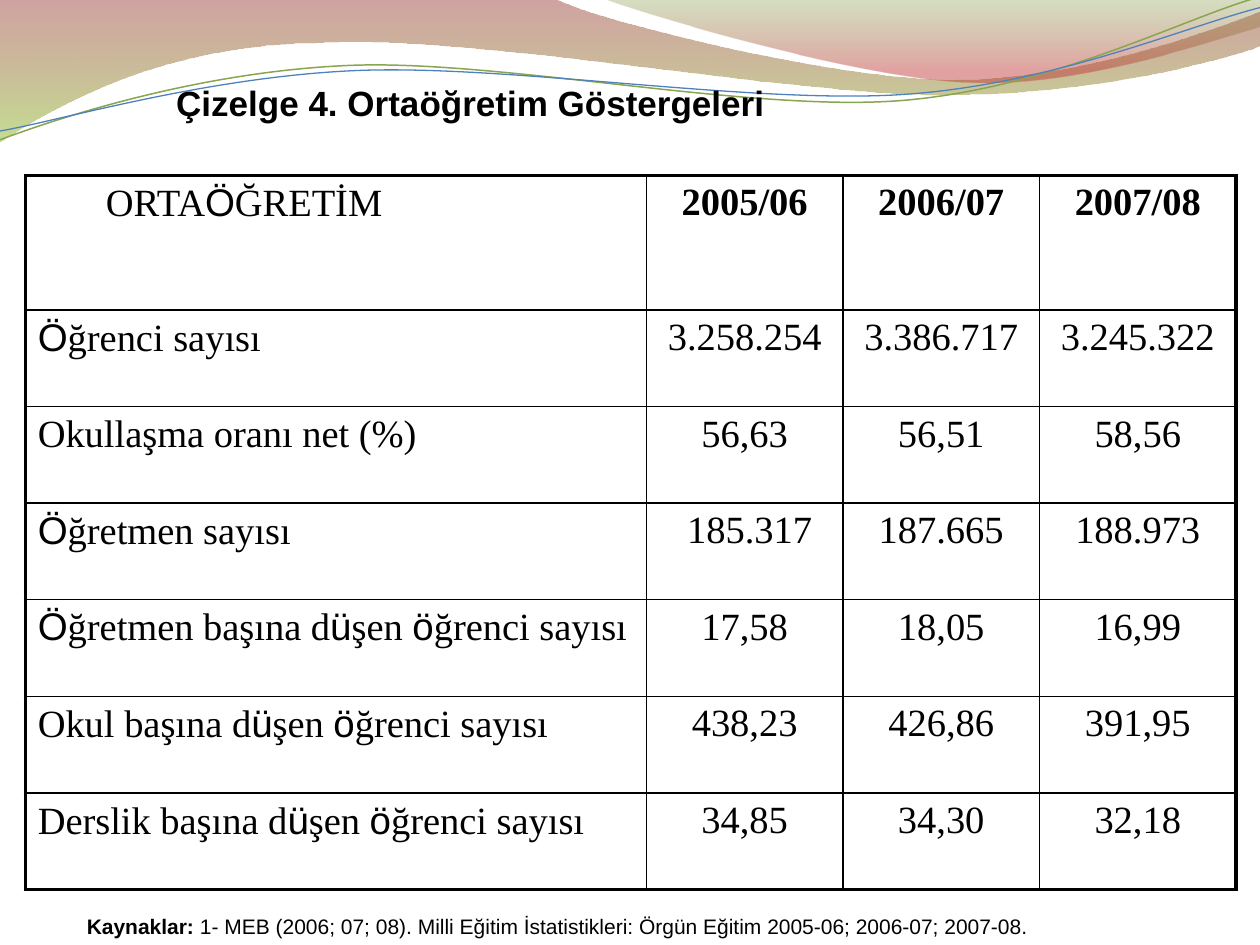
from itertools import groupby
from math import cos, radians, sin
from lxml import etree
from pptx import Presentation
from pptx import util as u
from pptx.dml.color import RGBColor
from pptx.enum import text
from pptx.oxml.ns import qn

Inches = u.Inches
THEME = {
    "ink": "000000", "green": "89A54F", "blue": "4F81BD",
    "title": 20, "cell": 22, "note": 12,
    "sans": "Arial", "serif": "Times New Roman",
}
LEFT, MID, JUST = text.PP_ALIGN.LEFT, text.PP_ALIGN.CENTER, text.PP_ALIGN.JUSTIFY


def write(par, runs, align):
    """Fill a paragraph with (words, font values) runs."""
    par.alignment = align
    for words, form in runs:
        run = par.add_run()
        run.text = words
        for key, val in form.items():
            setattr(run.font, key, val)
        run.font.color.rgb = RGBColor.from_string(THEME["ink"])


def trace(area, start, parts, tilt=0):
    """Outline of lines (2 numbers) and cubic curves (6); an open one is tilted."""
    left, top, wide, high = area
    pen = slide.shapes.build_freeform(Inches(left), Inches(top))
    pen.add_line_segments([(Inches(left + wide), Inches(top)),
                           (Inches(left + wide), Inches(top + high)),
                           (Inches(left), Inches(top + high))])
    shape = pen.convert_to_shape()
    shape.shadow.inherit = False
    shape.rotation = -tilt
    # Swap the plain frame for the curved outline
    route = next(shape._element.iter(qn("a:pathLst")))[0]
    for step in list(route):
        route.remove(step)
    c, s = cos(radians(tilt)), sin(radians(tilt))
    for n, part in enumerate([start] + parts):
        kind = "moveTo" if n == 0 else "lnTo" if len(part) == 2 else "cubicBezTo"
        step = etree.SubElement(route, qn("a:" + kind))
        for x, y in zip(part[::2], part[1::2]):
            x, y = x - left - wide / 2, y - top - high / 2
            etree.SubElement(step, qn("a:pt"),
                             x=str(Inches(x * c - y * s + wide / 2)),
                             y=str(Inches(x * s + y * c + high / 2)))
    if not tilt:
        etree.SubElement(route, qn("a:close"))
    return shape


deck = Presentation()
deck.slide_width, deck.slide_height = Inches(10), Inches(7.5)
slide = deck.slides.add_slide(deck.slide_layouts[6])

# Shaded bands across the top: area, start, outline, (place, colour, opacity) stops
bands = [
    ((-0.01, -0.01, 10.02, 1.14), (0, -0.01),
     [(4.4, -0.01), (4.76, 0.17, 6.64, 0.63, 7.58, 0.63),
      (8.53, 0.63, 9.58, 0.26, 10, 0.09), (10.01, 0.36),
      (9.83, 0.44, 8.7, 0.76, 7.46, 0.75), (6.22, 0.75, 3.82, 0.28, 2.57, 0.34),
      (1.29, 0.35, 0.46, 0.83, -0.01, 1.13), (0, -0.01)],
     [(0, "973330", 45), (1, "95C238", 55)]),
    ((4.79, -0.01, 5.21, 0.7), (4.79, -0.01),
     [(5.09, 0.11, 6.82, 0.62, 7.69, 0.65), (8.56, 0.69, 9.61, 0.32, 10, 0.21),
      (10, 0), (4.79, -0.01)],
     [(0, "769537", 30), (0.8, "BE3330", 45)]),
]
for area, start, parts, stops in bands:
    band = trace(area, start, parts)
    band.line.fill.background()
    band.fill.gradient()
    band.fill.gradient_angle = 270
    for stop, (place, hue, clear) in zip(band.fill.gradient_stops, stops):
        stop.position = place
        stop.color.rgb = RGBColor.from_string(hue)
        tint = stop._gs.find(qn("a:srgbClr"))
        etree.SubElement(tint, qn("a:alpha"), val=str(clear * 1000))

# Thin waves over the bands
waves = [
    ((-0.02, 0.22, 10.02, 0.71), (0, 1.11),
     [(0.48, 0.93, 1.58, 0.57, 2.77, 0.52), (3.95, 0.47, 5.93, 0.89, 7.13, 0.8),
      (8.33, 0.71, 9.38, 0.15, 9.98, -0.02)], "green", 0.85),
    ((-0.02, 0.3, 10.03, 0.58), (0, 1.04),
     [(0.47, 0.96, 1.64, 0.61, 2.83, 0.56), (4.03, 0.51, 5.97, 0.83, 7.17, 0.75),
      (8.36, 0.67, 9.41, 0.21, 10, 0.06)], "blue", 0.75),
]
for area, start, parts, hue, wide in waves:
    wave = trace(area, start, parts, 2.7)
    wave.fill.background()
    wave.line.color.rgb = RGBColor.from_string(THEME[hue])
    wave.line.width = u.Pt(wide)

# Title and source note
big = {"name": THEME["sans"], "size": u.Pt(THEME["title"]), "bold": True}
small = {"name": THEME["sans"], "size": u.Pt(THEME["note"]), "bold": False}
boxes = [
    ((1.3, 0.6, 5.32, 0.73), text.MSO_ANCHOR.TOP, LEFT,
     [("Çizelge 4. Ortaöğretim Göstergeleri", big)]),
    ((0.59, 7.2, 7.69, 0.3), text.MSO_ANCHOR.MIDDLE, JUST,
     [("Kaynaklar: ", {**small, "bold": True}),
      ("1- MEB (2006; 07; 08). Milli Eğitim İstatistikleri: "
       "Örgün Eğitim 2005-06; 2006-07; 2007-08.", small)]),
]
for area, anchor, align, runs in boxes:
    frame = slide.shapes.add_textbox(*map(Inches, area)).text_frame
    form = {"word_wrap": True, "vertical_anchor": anchor, "margin_right": 0}
    for key, val in form.items():
        setattr(frame, key, val)
    write(frame.paragraphs[0], runs, align)

# Table of indicators
rows = [
    ("ORTAÖĞRETİM", "2005/06", "2006/07", "2007/08"),
    ("Öğrenci sayısı", "3.258.254", "3.386.717", "3.245.322"),
    ("Okullaşma oranı net (%)", "56,63", "56,51", "58,56"),
    ("Öğretmen sayısı", "185.317", "187.665", "188.973"),
    ("Öğretmen başına düşen öğrenci sayısı", "17,58", "18,05", "16,99"),
    ("Okul başına düşen öğrenci sayısı", "438,23", "426,86", "391,95"),
    ("Derslik başına düşen öğrenci sayısı", "34,85", "34,30", "32,18"),
]
high, wide = len(rows), len(rows[0])
indent = {(0, 0): 0.54, (3, 1): 0.08}
grid = slide.shapes.add_table(high, wide, *map(Inches, (0.2, 1.39, 9.61, 5.67))).table
grid.first_row = grid.horz_banding = False
for c, col in enumerate(grid.columns):
    col.width = Inches(1.56 if c else 4.93)
for r, row in enumerate(grid.rows):
    row.height = Inches((5.67 - 1.07) / (high - 1) if r else 1.07)

for r, row in enumerate(rows):
    for c, words in enumerate(row):
        cell = grid.cell(r, c)
        par = cell.text_frame.paragraphs[0]
        if (r, c) in indent:
            par._p.get_or_add_pPr().set("marL", str(Inches(indent[r, c])))
        # Umlaut letters are set in the sans face
        runs = [("".join(part), {"name": THEME["sans" if mark else "serif"],
                                 "size": u.Pt(THEME["cell"]), "bold": r == 0 and c > 0})
                for mark, part in groupby(words, lambda ch: ch in "Ööü")]
        write(par, runs, MID if c else JUST)
        # Heavy outer frame, light inner rules
        props = cell._tc.get_or_add_tcPr()
        edges = {"L": c == 0, "R": c == wide - 1, "T": r == 0, "B": r == high - 1}
        for side, outer in edges.items():
            rule = etree.SubElement(props, qn("a:ln" + side), w=str(u.Pt(2 if outer else 1)))
            fill = etree.SubElement(rule, qn("a:solidFill"))
            etree.SubElement(fill, qn("a:srgbClr"), val=THEME["ink"])
        cell.fill.background()

deck.save("out.pptx")
